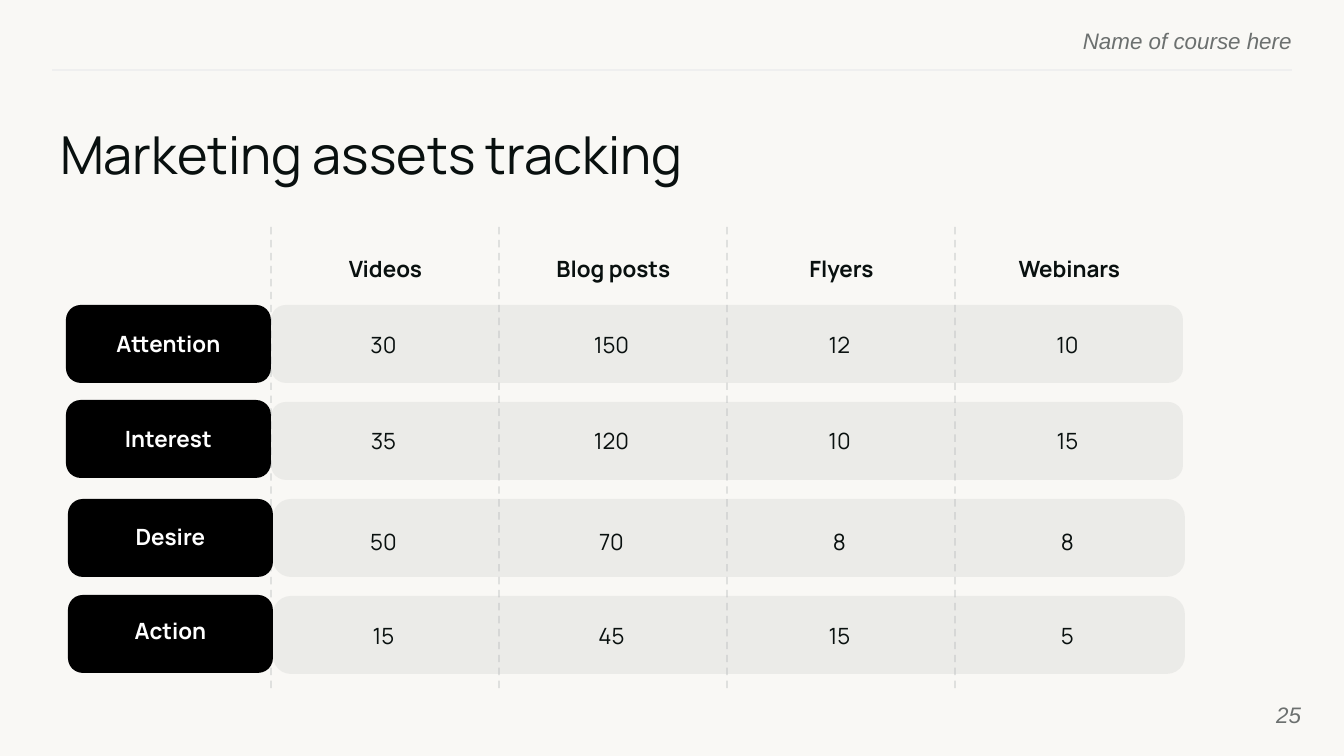
from dataclasses import dataclass

from pptx import Presentation
from pptx.dml.color import RGBColor
from pptx.enum.dml import MSO_LINE_DASH_STYLE as Dash
from pptx.enum.shapes import MSO_CONNECTOR as Connector, MSO_SHAPE as Preset
from pptx.enum.text import MSO_ANCHOR as Anchor, MSO_AUTO_SIZE as AutoSize, PP_ALIGN as Align
from pptx.oxml.ns import qn
from pptx.oxml.xmlchemy import OxmlElement
from pptx.util import Emu, Pt

SCALE = 914400 / 134.4
PAPER = RGBColor(0xF9, 0xF8, 0xF5)
INK = RGBColor(0x09, 0x10, 0x0F)
GREY = RGBColor(0x6C, 0x70, 0x6F)
RULE = RGBColor(0xEF, 0xEF, 0xEF)
MIST = RGBColor(0xB5, 0xB7, 0xB7)
BLACK = RGBColor(0, 0, 0)
WHITE = RGBColor(0xFF, 0xFF, 0xFF)

CELL = {"name": "Manrope", "size": Pt(12), "bold": False, "color": INK}
HEAD = CELL | {"bold": True}
LABEL = HEAD | {"color": WHITE}
TITLE = CELL | {"size": Pt(28)}
NOTE = {"name": "Arial", "size": Pt(12), "italic": True, "color": GREY}

COLUMN, ROW, ROW_HEIGHT, TEXT_HEIGHT = 228, 97, 78, 31


@dataclass
class Stage:
    """One table row with its small shifts in px."""
    name: str
    values: tuple
    shift: int
    label_rise: int
    label_inset: int
    value_drop: int
    corner: float


HEADINGS = ("Videos", "Blog posts", "Flyers", "Webinars")
STAGES = (
    Stage("Attention", (30, 150, 12, 10), 0, 0, 0, 24, 0.19),
    Stage("Interest", (35, 120, 10, 15), 0, 2, 0, 23, 0.19),
    Stage("Desire", (50, 70, 8, 8), 2, 0, 2, 27, 0.23),
    Stage("Action", (15, 45, 15, 5), 2, 1, 6, 24, 0.23),
)


def px(length):
    """Turn px into EMU."""
    return Emu(round(length * SCALE))


def write(shape, text, style, align, anchor=Anchor.MIDDLE, inset=0, bottom=0):
    """Fill a shape with one formatted paragraph."""
    frame = shape.text_frame
    layout = {"word_wrap": True, "auto_size": AutoSize.NONE, "vertical_anchor": anchor,
              "margin_left": px(inset), "margin_right": px(inset),
              "margin_top": px(inset), "margin_bottom": px(inset + bottom)}
    for name, value in layout.items():
        setattr(frame, name, value)
    para = frame.paragraphs[0]
    para.alignment = align
    span = para.add_run()
    span.text = text
    for name, value in style.items():
        if name == "color":
            span.font.color.rgb = value
        else:
            setattr(span.font, name, value)
    return para


def add_text(page, box, text, style, align=Align.CENTER, **options):
    """Add a text box."""
    write(page.shapes.add_textbox(*map(px, box)), text, style, align, **options)


def set_alpha(shape, percent):
    """Make the colour of a shape or line see-through."""
    alpha = OxmlElement("a:alpha")
    alpha.set("val", str(percent * 1000))
    next(shape._element.iter(qn("a:srgbClr"))).append(alpha)


def add_line(page, start, end, color, width):
    """Add a straight line without a shadow."""
    line = page.shapes.add_connector(Connector.STRAIGHT, *map(px, start + end))
    line.line.color.rgb = color
    line.line.width = Pt(width)
    line._element.spPr.append(OxmlElement("a:effectLst"))
    return line


def add_block(page, box, color, corner):
    """Add a flat rounded rectangle."""
    block = page.shapes.add_shape(Preset.ROUNDED_RECTANGLE, *map(px, box))
    block.adjustments[0] = corner
    block.shadow.inherit = False
    block.fill.solid()
    block.fill.fore_color.rgb = color
    block.line.fill.background()
    return block


def add_header(page, left, top, width):
    """Place the course name above a thin rule."""
    add_text(page, (left + width - 517, top, 517, 24), "Name of course here", NOTE,
             Align.RIGHT, anchor=Anchor.TOP)
    add_line(page, (left + width, top + 43), (left, top + 43), RULE, 0.75)


def add_title(page, left, top, width, height):
    """Place the slide title."""
    title = page.shapes.title
    for name, value in zip(("left", "top", "width", "height"), (left, top, width, height)):
        setattr(title, name, px(value))
    para = write(title, "Marketing assets tracking", TITLE, Align.LEFT, Anchor.TOP)
    para.space_after = Pt(10)


def add_columns(page, left, top, height):
    """Place the dashed dividers and column headings."""
    for index, heading in enumerate(HEADINGS):
        x = left + index * COLUMN
        divider = add_line(page, (x, top), (x, top + height), MIST, 1)
        divider.line.dash_style = Dash.DASH
        set_alpha(divider, 36)
        add_text(page, (x + 1, top + 26, COLUMN - 1, TEXT_HEIGHT), heading, HEAD, inset=3)


def add_stage(page, left, top, stage):
    """Place one row: its bar, its label and its values."""
    x = left + stage.shift
    bar = add_block(page, (x + 205, top, 4 * COLUMN, ROW_HEIGHT), MIST, stage.corner)
    set_alpha(bar, 20)
    label = add_block(page, (x, top - stage.label_rise, 205, ROW_HEIGHT), BLACK, 0.19)
    write(label, stage.name, LABEL, Align.CENTER, inset=3, bottom=stage.label_inset)
    for index, value in enumerate(stage.values):
        box = (left + 204 + index * COLUMN, top + stage.value_drop, COLUMN - 1, TEXT_HEIGHT)
        add_text(page, box, str(value), CELL, inset=3)


def add_tracking(page, left, top, height):
    """Place the whole grid of stages and asset types."""
    add_columns(page, left + 205, top, height)
    for index, stage in enumerate(STAGES):
        add_stage(page, left, top + 78 + index * ROW, stage)


def main():
    """Build and save the deck."""
    deck = Presentation()
    deck.slide_width, deck.slide_height = px(1344), px(756)
    page = deck.slides.add_slide(deck.slide_layouts[5])
    page.background.fill.solid()
    page.background.fill.fore_color.rgb = PAPER
    add_header(page, 52, 27, 1240)
    add_title(page, 60, 122, 1241, 69)
    add_tracking(page, 66, 227, 462)
    add_text(page, (1220, 686, 81, 58), "25", NOTE, Align.RIGHT)
    deck.save("out.pptx")


if __name__ == "__main__":
    main()
